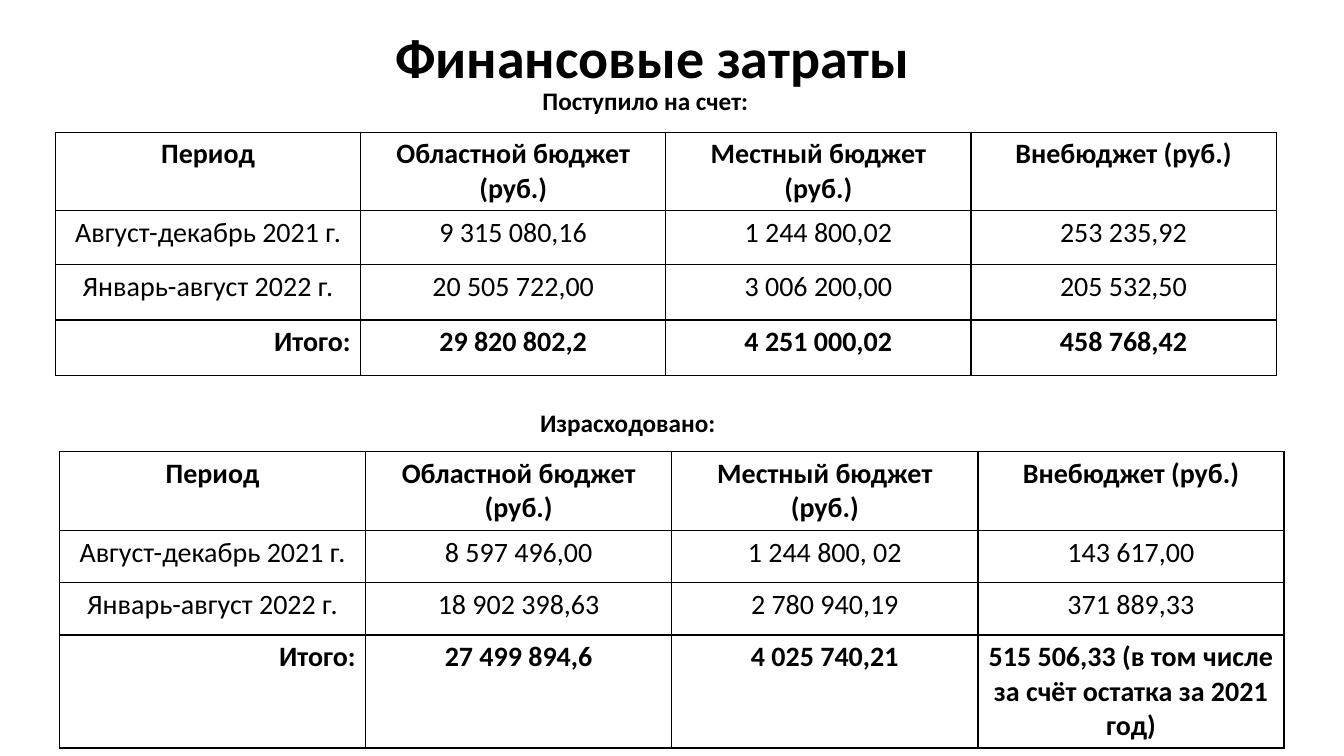
from lxml import etree
from pptx import Presentation
from pptx.dml.color import RGBColor
from pptx.enum.text import MSO_ANCHOR, PP_ALIGN
from pptx.oxml.ns import qn
from pptx.util import Cm, Pt

BLACK = RGBColor(0, 0, 0)
WHITE = RGBColor(255, 255, 255)
LEFT, CENTER, RIGHT = PP_ALIGN.LEFT, PP_ALIGN.CENTER, PP_ALIGN.RIGHT
MIDDLE = MSO_ANCHOR.MIDDLE
FONT = "Calibri"
TITLE_ONLY = 5

BUDGETS = ["Областной бюджет (руб.)", "Местный бюджет (руб.)", "Внебюджет (руб.)"]
HEADER = ["Период", *BUDGETS]
AUTUMN = "Август-декабрь 2021 г."
SPRING = "Январь-август 2022 г."
TOTAL = "Итого:"

RECEIVED = [
    HEADER,
    [AUTUMN, "9 315 080,16", "1 244 800,02", "253 235,92"],
    [SPRING, "20 505 722,00", "3 006 200,00", "205 532,50"],
    [TOTAL, "29 820 802,2", "4 251 000,02", "458 768,42"],
]
SPENT = [
    HEADER,
    [AUTUMN, "8 597 496,00", "1 244 800, 02", "143 617,00"],
    [SPRING, "18 902 398,63", "2 780 940,19", "371 889,33"],
    [TOTAL, "27 499 894,6", "4 025 740,21",
     "515 506,33 (в том числе за счёт остатка за 2021 год)"],
]


def write(frame, text, size, align, bold=True):
    para = frame.paragraphs[0]
    para.alignment = align
    span = para.add_run()
    span.text = text
    span.font.name = FONT
    span.font.size = Pt(size)
    span.font.bold = bold
    span.font.color.rgb = BLACK
    return para


def add_title(page, left, top, width, height):
    title = page.shapes.title
    title.left, title.top = Cm(left), Cm(top)
    title.width, title.height = Cm(width), Cm(height)
    title.text_frame.vertical_anchor = MIDDLE
    para = write(title.text_frame, "Финансовые затраты", 40, CENTER)
    para.line_spacing = 0.9


def add_caption(page, text, align, left, top, width, height):
    box = page.shapes.add_textbox(Cm(left), Cm(top), Cm(width), Cm(height))
    box.text_frame.word_wrap = True
    write(box.text_frame, text, 18, align)


def add_borders(cell):
    properties = cell._tc.get_or_add_tcPr()
    for side in ("a:lnL", "a:lnR", "a:lnT", "a:lnB"):
        line = etree.SubElement(properties, qn(side), w=str(Pt(1)))
        fill = etree.SubElement(line, qn("a:solidFill"))
        etree.SubElement(fill, qn("a:srgbClr"), val=str(BLACK))


def add_budget_table(page, rows, left, top, width, heights):
    frame = page.shapes.add_table(
        len(rows), len(HEADER), Cm(left), Cm(top), Cm(width), Cm(sum(heights)))
    table = frame.table
    table.first_row = False
    table.horz_banding = False
    for row, height in zip(table.rows, heights):
        row.height = Cm(height)
    for row_index, row in enumerate(rows):
        for column_index, text in enumerate(row):
            cell = table.cell(row_index, column_index)
            add_borders(cell)
            cell.fill.solid()
            cell.fill.fore_color.rgb = WHITE
            write(cell.text_frame, text, 20,
                  RIGHT if text == TOTAL else CENTER,
                  row_index in (0, len(rows) - 1))


def main():
    deck = Presentation()
    deck.slide_width, deck.slide_height = Cm(33.87), Cm(19.05)
    page = deck.slides.add_slide(deck.slide_layouts[TITLE_ONLY])
    add_title(page, 1.83, 0.43, 29.21, 2.18)
    add_budget_table(page, RECEIVED, 1.4, 3.33, 30.76, [1.9, 1.35, 1.4, 1.4])
    add_budget_table(page, SPENT, 1.5, 11.38, 30.86, [1.35, 1.32, 1.32, 1.96])
    add_caption(page, "Израсходовано:", LEFT, 13.36, 10.13, 9.27, 1.02)
    add_caption(page, "Поступило на счет:", CENTER, 12.19, 2.03, 8.15, 1.02)
    deck.save("out.pptx")


if __name__ == "__main__":
    main()
